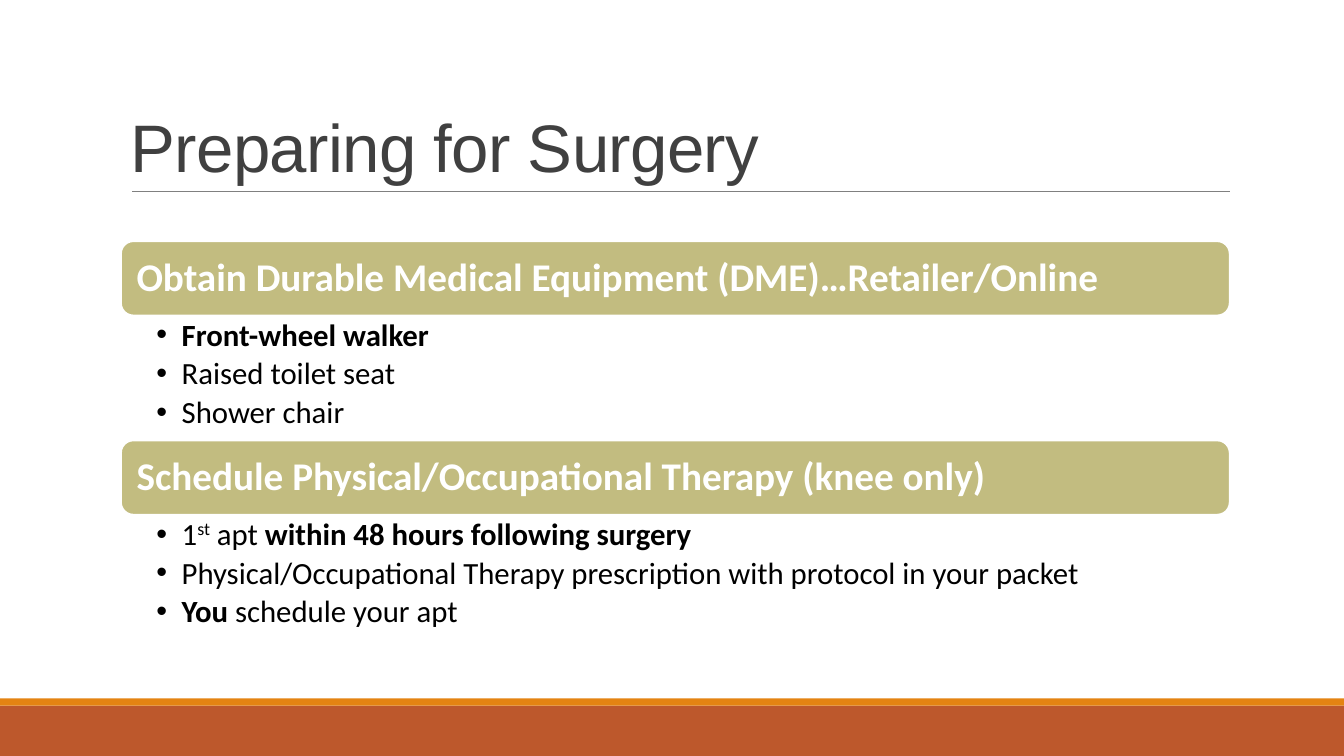
import dataclasses

import lxml.etree
import pptx
import pptx.dml.color
import pptx.enum.shapes
import pptx.enum.text
import pptx.oxml.ns
import pptx.util
from pptx.util import Cm, Pt

SLIDE_WIDTH, SLIDE_HEIGHT = 33.87, 19.05
TOPIC_LEFT, TOPIC_TOP, TOPIC_WIDTH = 3.05, 6.08, 27.94
HEADING_HEIGHT, STEPS_HEIGHT = 1.87, 3.15
HANGING_INDENT = 0.64


@dataclasses.dataclass(frozen=True)
class Phrase:
    text: str
    bold: bool = False
    superscript: bool = False


@dataclasses.dataclass(frozen=True)
class Topic:
    heading: str
    steps: list[list[Phrase]]


@dataclasses.dataclass(frozen=True)
class Band:
    top: float
    height: float
    color: str


TOPICS = [
    Topic("Obtain Durable Medical Equipment (DME)…Retailer/Online", [
        [Phrase("Front-wheel walker", bold=True)],
        [Phrase("Raised toilet seat")],
        [Phrase("Shower chair")],
    ]),
    Topic("Schedule Physical/Occupational Therapy (knee only)", [
        [Phrase("1"), Phrase("st", superscript=True), Phrase(" apt "),
         Phrase("within 48 hours following surgery", bold=True)],
        [Phrase("Physical/Occupational Therapy prescription with protocol in your packet")],
        [Phrase("You", bold=True), Phrase(" schedule your apt")],
    ]),
]

FOOTER_BANDS = [Band(17.78, 1.27, "BD582C"), Band(17.6, 0.18, "E48312")]


def rgb(value: str) -> pptx.dml.color.RGBColor:
    return pptx.dml.color.RGBColor.from_string(value)


def set_frame(frame, anchor: str, left: float, top: float, right: float, bottom: float) -> None:
    frame.word_wrap = True
    frame.vertical_anchor = pptx.enum.text.MSO_ANCHOR[anchor]
    frame.margin_left, frame.margin_top = Cm(left), Cm(top)
    frame.margin_right, frame.margin_bottom = Cm(right), Cm(bottom)


def style_run(run, font: str, size: float, color: str, bold: bool = False) -> None:
    run.font.name = font
    run.font.size = Pt(size)
    run.font.bold = bold
    run.font.color.rgb = rgb(color)


def add_footer_band(slide, band: Band) -> None:
    strip = slide.shapes.add_shape(
        pptx.enum.shapes.MSO_SHAPE.RECTANGLE, 0, Cm(band.top), Cm(SLIDE_WIDTH), Cm(band.height))
    strip.shadow.inherit = False
    strip.fill.solid()
    strip.fill.fore_color.rgb = rgb(band.color)
    strip.line.fill.background()


def add_title(slide, text: str) -> None:
    rule = slide.shapes.add_connector(
        pptx.enum.shapes.MSO_CONNECTOR.STRAIGHT, Cm(3.33), Cm(4.83), Cm(31), Cm(4.83))
    rule.line.color.rgb = rgb("808080")
    rule.line.width = Pt(0.5)
    lxml.etree.SubElement(rule._element.spPr, pptx.oxml.ns.qn("a:effectLst"))

    title = slide.shapes.add_textbox(Cm(TOPIC_LEFT), Cm(0.79), Cm(TOPIC_WIDTH), Cm(4.04))
    set_frame(title.text_frame, "BOTTOM", 0.25, 0.13, 0.25, 0.13)
    title.text_frame.text = text
    paragraph = title.text_frame.paragraphs[0]
    paragraph.line_spacing = 0.85
    run = paragraph.runs[0]
    style_run(run, "Arial", 48, "404040")
    run._r.get_or_add_rPr().set("spc", "-50")


def add_heading(slide, text: str, top: float) -> None:
    heading = slide.shapes.add_shape(
        pptx.enum.shapes.MSO_SHAPE.ROUNDED_RECTANGLE,
        Cm(TOPIC_LEFT), Cm(top), Cm(TOPIC_WIDTH), Cm(HEADING_HEIGHT))
    heading.shadow.inherit = False
    heading.fill.solid()
    heading.fill.fore_color.rgb = rgb("C2BC80")
    heading.line.color.rgb = rgb("FFFFFF")
    heading.line.width = Pt(1.25)
    set_frame(heading.text_frame, "MIDDLE", 0.3, 0.3, 0.3, 0.3)
    heading.text_frame.text = text
    paragraph = heading.text_frame.paragraphs[0]
    paragraph.alignment = pptx.enum.text.PP_ALIGN.LEFT
    paragraph.line_spacing = 0.9
    style_run(paragraph.runs[0], "Calibri", 28, "FFFFFF", bold=True)


def add_bullet(paragraph) -> None:
    paragraph.level = 1
    paragraph.line_spacing = 0.9
    paragraph.space_after = Pt(4)
    properties = paragraph._p.get_or_add_pPr()
    properties.set("marL", str(Cm(HANGING_INDENT)))
    properties.set("indent", str(-Cm(HANGING_INDENT)))
    qn = pptx.oxml.ns.qn
    lxml.etree.SubElement(properties, qn("a:buFont")).set("typeface", "Arial")
    lxml.etree.SubElement(properties, qn("a:buChar")).set("char", "•")


def add_steps(slide, steps: list[list[Phrase]], top: float) -> None:
    frame = slide.shapes.add_textbox(
        Cm(TOPIC_LEFT), Cm(top), Cm(TOPIC_WIDTH), Cm(STEPS_HEIGHT)).text_frame
    set_frame(frame, "TOP", 0.89, 0.1, 0.56, 0.1)
    for index, step in enumerate(steps):
        paragraph = frame.add_paragraph() if index else frame.paragraphs[0]
        add_bullet(paragraph)
        for phrase in step:
            run = paragraph.add_run()
            run.text = phrase.text
            style_run(run, "Calibri", 22, "000000", phrase.bold)
            if phrase.superscript:
                run._r.get_or_add_rPr().set("baseline", "30000")


def main() -> None:
    presentation = pptx.Presentation()
    presentation.slide_width = Cm(SLIDE_WIDTH)
    presentation.slide_height = Cm(SLIDE_HEIGHT)
    slide = presentation.slides.add_slide(presentation.slide_layouts[6])
    for band in FOOTER_BANDS:
        add_footer_band(slide, band)
    add_title(slide, "Preparing for Surgery")
    for index, topic in enumerate(TOPICS):
        top = TOPIC_TOP + index * (HEADING_HEIGHT + STEPS_HEIGHT)
        add_heading(slide, topic.heading, top)
        add_steps(slide, topic.steps, top + HEADING_HEIGHT)
    presentation.save("out.pptx")


if __name__ == "__main__":
    main()
